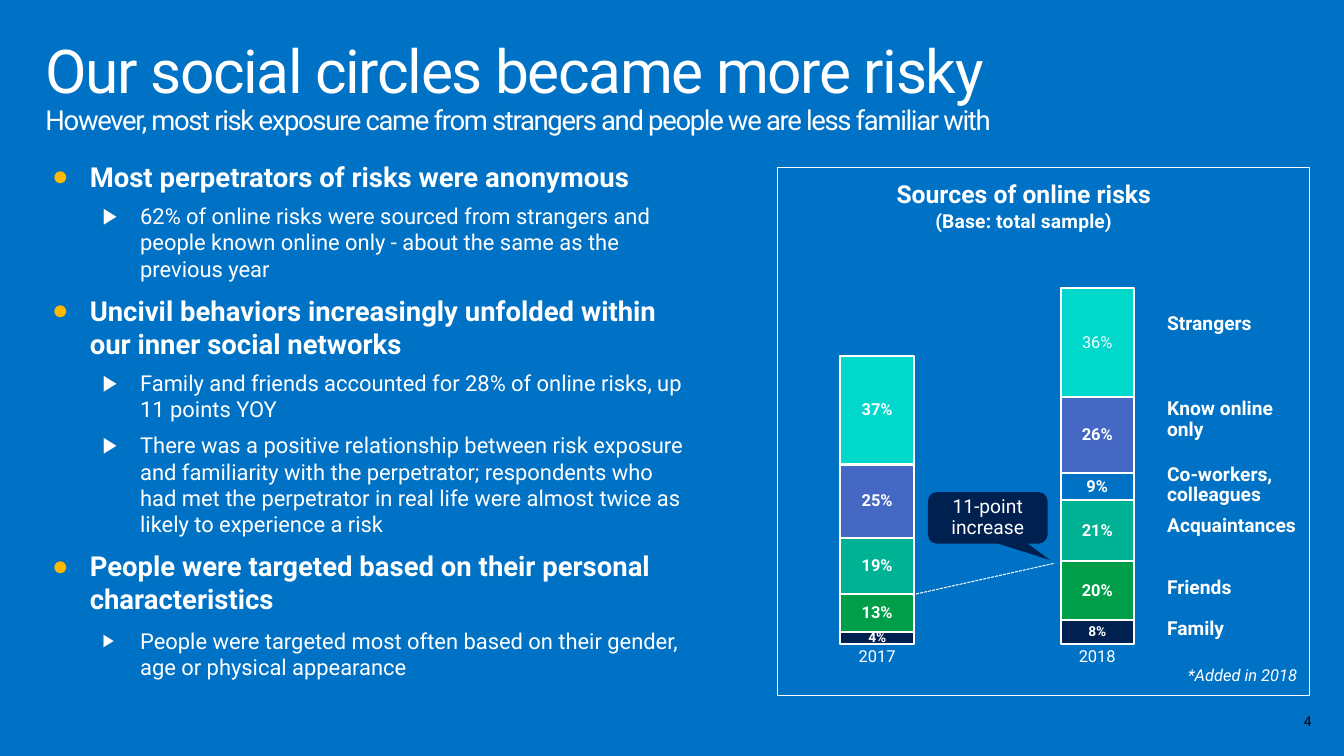
from lxml.etree import SubElement
from pptx import Presentation
from pptx.chart.data import CategoryChartData
from pptx.dml.color import RGBColor
from pptx.enum.chart import XL_CHART_TYPE as ChartType, XL_LABEL_POSITION as LabelPos, XL_TICK_MARK as Tick
from pptx.enum.dml import MSO_LINE
from pptx.enum.shapes import MSO_CONNECTOR, MSO_SHAPE
from pptx.enum.text import MSO_ANCHOR as Anchor, MSO_AUTO_SIZE as AutoSize, PP_ALIGN as Align
from pptx.oxml import parse_xml
from pptx.oxml.ns import nsdecls, qn
from pptx.util import Inches, Pt

BLUE = RGBColor(0x00, 0x72, 0xC6)
NAVY = RGBColor(0x00, 0x20, 0x50)
GREEN = RGBColor(0x00, 0x9E, 0x49)
TEAL = RGBColor(0x00, 0xB2, 0x94)
INDIGO = RGBColor(0x46, 0x68, 0xC5)
AQUA = RGBColor(0x00, 0xD8, 0xCC)
AMBER = RGBColor(0xFF, 0xB9, 0x00)
WHITE = RGBColor(0xFF, 0xFF, 0xFF)
BLACK = RGBColor(0x00, 0x00, 0x00)

LABEL_INSETS = (0.2, 0.16)

# level, text, space before, bullet size in percent
FINDINGS = [
    (0, "Most perpetrators of risks were anonymous", 6, 100),
    (1, "62% of online risks were sourced from strangers and people known online only"
        " - about the same as the previous year", 6, 100),
    (0, "Uncivil behaviors increasingly unfolded within our inner social networks", 8, 100),
    (1, "Family and friends accounted for 28% of online risks, up 11 points YOY", 6, 100),
    (1, "There was a positive relationship between risk exposure and familiarity with the"
        " perpetrator; respondents who had met the perpetrator in real life were almost"
        " twice as likely to experience a risk", 6, 100),
    (0, "People were targeted based on their personal characteristics", 8, 100),
    (1, "People were targeted most often based on their gender, age or physical appearance", 8, 80),
]

# values for 2017 and 2018, fill, label size
SOURCES = [
    ((0.04, 0.08), NAVY, 10),
    ((0.13, 0.20), GREEN, 12),
    ((0.19, 0.21), TEAL, 12),
    ((None, 0.09), BLUE, 12),
    ((0.25, 0.26), INDIGO, 12),
    ((0.37, 0.37), AQUA, 12),
]

# text, top, width, height, wrap
SOURCE_LABELS = [
    ("Family", 6.16, 1.0, 0.54, False),
    ("Friends", 5.74, 1.07, 0.54, False),
    ("Acquaintances", 5.12, 1.75, 0.54, True),
    ("Strangers", 3.07, 1.32, 0.54, True),
    ("Know online only", 3.88, 1.52, 0.75, True),
    ("Co-workers, colleagues", 4.54, 1.64, 0.75, True),
]


class RiskSlide:
    font_name = "Roboto"

    def __init__(self, deck):
        self.slide = deck.slides.add_slide(deck.slide_layouts[5])
        self.slide.background.fill.solid()
        self.slide.background.fill.fore_color.rgb = BLUE

    def style(self, font, size, color=WHITE, bold=False, italic=False):
        font.name, font.size, font.bold, font.italic = self.font_name, Pt(size), bold, italic
        font.color.rgb = color

    def run(self, paragraph, text, size, **look):
        run = paragraph.add_run()
        run.text = text
        self.style(run.font, size, **look)
        return run

    def frame(self, holder, insets=(0.1, 0.05), wrap=True, anchor=Anchor.TOP, fit=AutoSize.NONE):
        frame = holder.text_frame
        frame.margin_left = frame.margin_right = Inches(insets[0])
        frame.margin_top = frame.margin_bottom = Inches(insets[1])
        frame.word_wrap, frame.vertical_anchor, frame.auto_size = wrap, anchor, fit
        return frame

    def title(self, box, headline, subtitle):
        title = self.slide.shapes.title
        title.left, title.top, title.width, title.height = map(Inches, box)
        line = self.frame(title, (0.16, 0.1)).paragraphs[0]
        line.alignment, line.line_spacing = Align.LEFT, 0.9
        head = self.run(line, headline, 44)
        line.add_line_break()
        for part in (head, self.run(line, subtitle, 20)):
            part.font._element.set("spc", "-100")

    def text(self, box, text, size, align=Align.LEFT, spacing=0.9, frame=None, **look):
        holder = self.slide.shapes.add_textbox(*map(Inches, box))
        line = self.frame(holder, **(frame or {})).paragraphs[0]
        line.alignment, line.line_spacing = align, spacing
        self.run(line, text, size, **look)

    def shape(self, kind, box, fill=None, outline=None):
        shape = self.slide.shapes.add_shape(kind, *map(Inches, box))
        shape.shadow.inherit = False
        if fill is None:
            shape.fill.background()
        else:
            shape.fill.solid()
            shape.fill.fore_color.rgb = fill
        if outline is None:
            shape.line.fill.background()
        else:
            shape.line.color.rgb, shape.line.width = outline, Pt(0.75)
        return shape

    def bullets(self, box, items):
        panel = self.shape(MSO_SHAPE.RECTANGLE, box, BLUE)
        frame = self.frame(panel, fit=AutoSize.SHAPE_TO_FIT_TEXT)
        for i, (level, text, before, bullet_size) in enumerate(items):
            line = frame.add_paragraph() if i else frame.paragraphs[0]
            line.level, line.alignment = level, Align.LEFT
            line.space_before, line.space_after = Pt(before), Pt(1)
            props = line._p.get_or_add_pPr()
            props.set("marL", str(Inches((0.38, 0.89)[level])))
            props.set("indent", str(Inches(-0.38)))
            color = SubElement(props, qn("a:buClr"))
            SubElement(color, qn("a:srgbClr"), val=str((AMBER, WHITE)[level]))
            SubElement(props, qn("a:buSzPct"), val=str(bullet_size * 1000))
            SubElement(props, qn("a:buFont"), typeface="Arial")
            SubElement(props, qn("a:buChar"), char="●▶"[level])
            self.run(line, text, (20, 16)[level], bold=level == 0)

    def callout(self, box, text, adjustments):
        bubble = self.shape(MSO_SHAPE.ROUNDED_RECTANGULAR_CALLOUT, box, NAVY)
        for i, value in enumerate(adjustments):
            bubble.adjustments[i] = value
        line = self.frame(bubble, LABEL_INSETS, anchor=Anchor.MIDDLE).paragraphs[0]
        line.alignment, line.line_spacing = Align.CENTER, 0.9
        self.run(line, text, 14)

    def dashed_line(self, start, end):
        line = self.slide.shapes.add_connector(MSO_CONNECTOR.STRAIGHT, *map(Inches, start + end))
        line.line.color.rgb, line.line.width = WHITE, Pt(0.75)
        line.line.dash_style = MSO_LINE.SQUARE_DOT
        SubElement(line._element.spPr, qn("a:effectLst"))

    def set_layout(self, parent, index, **places):
        """Fix a chart part at fractions of the chart area."""
        for old in parent.findall(qn("c:layout")):
            parent.remove(old)
        target = '<c:layoutTarget val="inner"/>' if "w" in places else ""
        modes = "".join(f'<c:{k}Mode val="edge"/>' for k in "xy")
        values = "".join(f'<c:{k} val="{v}"/>' for k, v in places.items())
        parent.insert(index, parse_xml(
            f'<c:layout {nsdecls("c")}><c:manualLayout>{target}{modes}{values}</c:manualLayout></c:layout>'))

    def stacked_chart(self, box, years, sources):
        data = CategoryChartData(number_format="0%")
        data.categories = years
        for i, (values, _, _) in enumerate(sources, 1):
            data.add_series(f"Series {i}", values)
        chart = self.slide.shapes.add_chart(ChartType.COLUMN_STACKED, *map(Inches, box), data).chart
        self.style(chart.font, 10, BLACK)
        chart.has_legend = False
        heading = chart.chart_title.text_frame
        self.run(heading.paragraphs[0], "Sources of online risks", 18, bold=True)
        self.run(heading.add_paragraph(), "(Base: total sample)", 14, bold=True)
        self.set_layout(chart.chart_title._element, 1, x=0.3, y=0.01)
        self.set_layout(chart._chartSpace.chart.plotArea, 0, x=0.03, y=0.12, w=0.94, h=0.8)

        year_axis, share_axis = chart.category_axis, chart.value_axis
        year_axis.major_tick_mark = year_axis.minor_tick_mark = Tick.NONE
        year_axis.format.line.fill.background()
        self.style(year_axis.tick_labels.font, 12)
        share_axis.minimum_scale, share_axis.maximum_scale = 0, 1.4
        share_axis.has_major_gridlines = share_axis.visible = False

        plot = chart.plots[0]
        plot.gap_width, plot.overlap, plot.vary_by_categories = 200, 100, False
        for series, (_, color, size) in zip(plot.series, sources):
            series.format.fill.solid()
            series.format.fill.fore_color.rgb = color
            series.format.line.color.rgb, series.format.line.width = WHITE, Pt(1.5)
            labels = series.data_labels
            labels.show_value, labels.position = True, LabelPos.CENTER
            labels.number_format, labels.number_format_is_linked = "0%", False
            self.style(labels.font, size, bold=True)
        strangers_2018 = plot.series[-1].points[1].data_label
        self.run(strangers_2018.text_frame.paragraphs[0], "36%", 12)
        strangers_2018.position = LabelPos.CENTER


def main():
    deck = Presentation()
    deck.slide_width, deck.slide_height = Inches(13.6), Inches(7.65)
    page = RiskSlide(deck)
    page.text((10.2, 7.09, 3.17, 0.41), "4", 10, Align.RIGHT, 1.0, {"anchor": Anchor.MIDDLE}, color=BLACK)
    page.title((0.3, 0.32, 13, 1), "Our social circles became more risky",
               "However, most risk exposure came from strangers and people we are less familiar with")
    page.bullets((0.43, 1.57, 6.62, 5.42), FINDINGS)
    page.stacked_chart((7.62, 1.73, 4.74, 5.2), ("2017", "2018"), SOURCES)
    label_frame = {"insets": LABEL_INSETS, "fit": AutoSize.SHAPE_TO_FIT_TEXT}
    for source, top, width, height, wrap in SOURCE_LABELS:
        page.text((11.61, top, width, height), source, 14, frame={**label_frame, "wrap": wrap}, bold=True)
    page.dashed_line((9.23, 6.02), (10.67, 5.7))
    page.shape(MSO_SHAPE.RECTANGLE, (7.87, 1.7, 5.38, 5.34), outline=WHITE)
    page.text((11.82, 6.66, 1.53, 0.5), "*Added in 2018", 12, frame={**label_frame, "wrap": False}, italic=True)
    page.callout((9.39, 4.98, 1.21, 0.52), "11-point increase", (0.52, 0.82, 0.17))
    deck.save("out.pptx")


if __name__ == "__main__":
    main()
